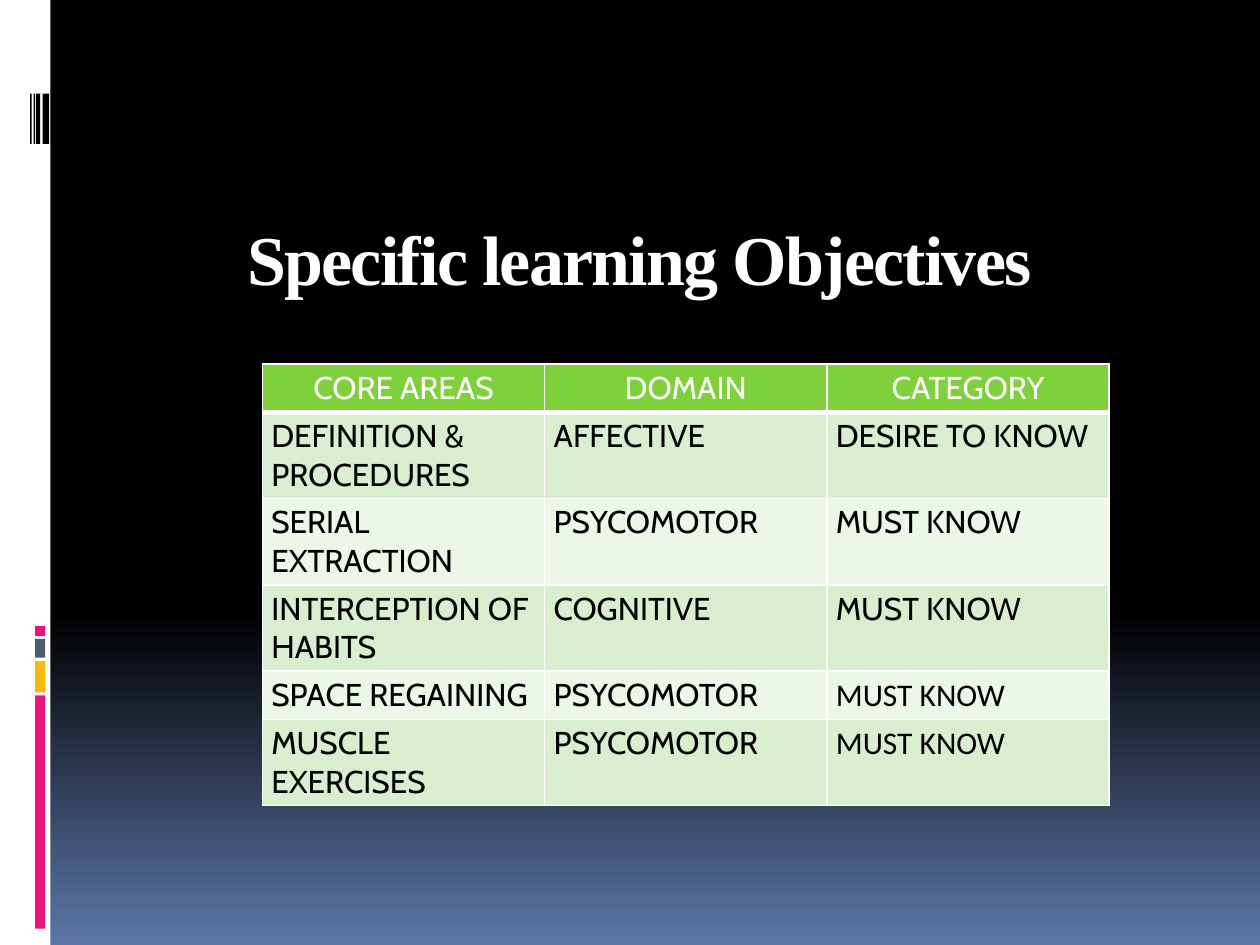
from dataclasses import dataclass

from lxml import etree
from pptx import Presentation
from pptx.dml.color import RGBColor
from pptx.enum.shapes import MSO_SHAPE
from pptx.enum.text import MSO_ANCHOR, PP_ALIGN
from pptx.oxml.ns import qn
from pptx.util import Cm, Pt

RECTANGLE = MSO_SHAPE.RECTANGLE
MIDDLE = MSO_ANCHOR.MIDDLE
CENTER = PP_ALIGN.CENTER
LEFT = PP_ALIGN.LEFT


@dataclass(frozen=True)
class Theme:
    white: str = "FFFFFF"
    black: str = "000000"
    blue: str = "5B77A8"
    pink: str = "EA157A"
    amber: str = "FEB80A"
    slate: str = "4E5B6F"
    header: str = "7FD13B"
    bands: tuple = ("D8EECE", "ECF7E8")
    title_font: str = "Times New Roman"
    body_font: str = "Cabin"
    plain_font: str = "Calibri"
    title_size: int = 40
    body_size: int = 18
    thin_rule: int = 1
    thick_rule: int = 3


class SlideBuilder:
    def __init__(self, page, theme):
        self.page = page
        self.theme = theme

    def background(self, start, end, start_position):
        fill = self.page.background.fill
        fill.gradient()
        fill.gradient_angle = 270
        for stop, color, position in zip(
            fill.gradient_stops, (start, end), (start_position, 1)
        ):
            stop.color.rgb = RGBColor.from_string(color)
            stop.position = position

    def bar(self, left, top, width, height, color):
        box = self.page.shapes.add_shape(
            RECTANGLE, Cm(left), Cm(top), Cm(width), Cm(height)
        )
        box.shadow.inherit = False
        box.fill.solid()
        box.fill.fore_color.rgb = RGBColor.from_string(color)
        box.line.fill.background()

    def style(self, para, font, size, color, align, bold=False):
        para.alignment = align
        para.font.name = font
        para.font.size = Pt(size)
        para.font.bold = bold
        para.font.color.rgb = RGBColor.from_string(color)

    def title(self, text, left, top, width, height):
        box = self.page.shapes.add_textbox(Cm(left), Cm(top), Cm(width), Cm(height))
        frame = box.text_frame
        frame.word_wrap = True
        frame.vertical_anchor = MIDDLE
        para = frame.paragraphs[0]
        span = para.add_run()
        span.text = text
        span.font._element.set("spc", "-100")
        theme = self.theme
        self.style(para, theme.title_font, theme.title_size, theme.white, CENTER, True)

    def borders(self, cell, bottom):
        properties = cell._tc.get_or_add_tcPr()
        thin = self.theme.thin_rule
        for side, width in zip("LRTB", (thin, thin, thin, bottom)):
            line = etree.SubElement(properties, qn(f"a:ln{side}"), w=str(Pt(width)))
            fill = etree.SubElement(line, qn("a:solidFill"))
            etree.SubElement(fill, qn("a:srgbClr"), val=self.theme.white)

    def cell(self, cell, text, fill, color, font, align, bottom):
        cell.margin_left = cell.margin_right = Cm(0.18)
        cell.margin_top = cell.margin_bottom = Cm(0.1)
        self.borders(cell, bottom)
        cell.fill.solid()
        cell.fill.fore_color.rgb = RGBColor.from_string(fill)
        cell.text = text
        para = cell.text_frame.paragraphs[0]
        self.style(para, font, self.theme.body_size, color, align)

    def table(self, rows, heights, left, top, width, plain_cells):
        theme = self.theme
        table = self.page.shapes.add_table(
            len(rows), len(rows[0]), Cm(left), Cm(top), Cm(width), Cm(sum(heights))
        ).table
        for r, (row, height) in enumerate(zip(rows, heights)):
            table.rows[r].height = Cm(height)
            if r == 0:
                fill, color, align = theme.header, theme.white, CENTER
                bottom = theme.thick_rule
            else:
                fill, color, align = theme.bands[(r - 1) % 2], theme.black, LEFT
                bottom = theme.thin_rule
            for c, text in enumerate(row):
                font = theme.plain_font if (r, c) in plain_cells else theme.body_font
                self.cell(table.cell(r, c), text, fill, color, font, align, bottom)


def main():
    theme = Theme()
    deck = Presentation()
    deck.slide_width, deck.slide_height = Cm(25.4), Cm(19.05)
    slide = SlideBuilder(deck.slides.add_slide(deck.slide_layouts[6]), theme)

    slide.background(theme.black, theme.blue, 0.65)
    slide.bar(0, 0, 1.02, 19.05, theme.white)
    for top, height, color in (
        (14.02, 4.7, theme.pink),
        (13.33, 0.63, theme.amber),
        (12.88, 0.38, theme.slate),
        (12.62, 0.2, theme.pink),
    ):
        slide.bar(0.71, top, 0.2, height, color)
    for left, width in ((0.86, 0.13), (0.73, 0.08), (0.68, 0.03), (0.61, 0.03)):
        slide.bar(left, 1.89, width, 1.01, theme.black)

    slide.title("Specific learning Objectives ", 3.4, 4.04, 19.3, 2.29)

    rows = (
        ("CORE AREAS", "DOMAIN", "CATEGORY"),
        ("DEFINITION & PROCEDURES", "AFFECTIVE", "DESIRE TO KNOW"),
        ("SERIAL EXTRACTION", "PSYCOMOTOR", "MUST KNOW"),
        ("INTERCEPTION OF HABITS", "COGNITIVE", "MUST KNOW"),
        ("SPACE REGAINING", "PSYCOMOTOR", "MUST KNOW"),
        ("MUSCLE EXERCISES", "PSYCOMOTOR", "MUST KNOW"),
    )
    single, double = 0.97, 1.74
    heights = (single, double, double, double, single, double)
    slide.table(rows, heights, 5.29, 7.34, 17.07, {(4, 2), (5, 2)})

    deck.save("out.pptx")


if __name__ == "__main__":
    main()
